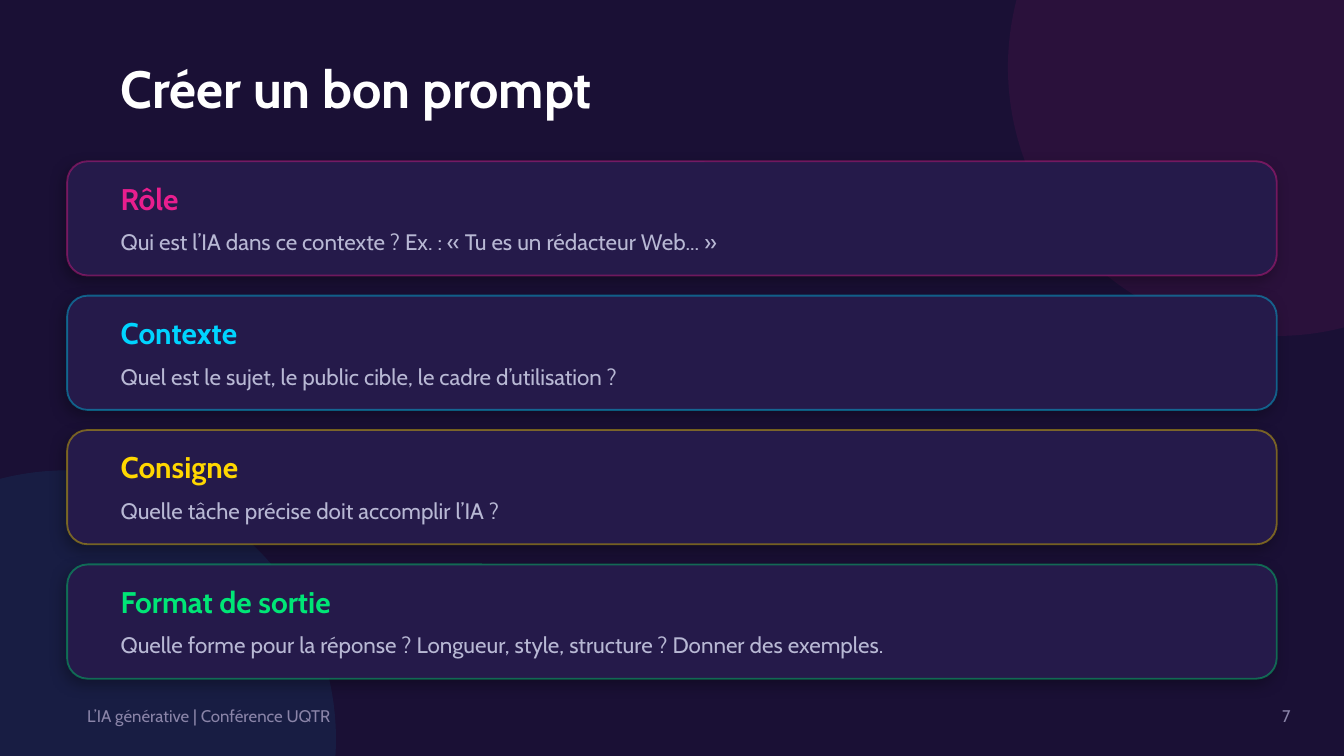
from lxml import etree
from pptx import Presentation
from pptx import util as u
from pptx.dml.color import RGBColor
from pptx.enum import shapes, text
from pptx.oxml import ns

FONT = "Cabin"
NIGHT = RGBColor(0x1A, 0x10, 0x35)
PANEL = RGBColor(0x25, 0x1A, 0x4A)
WHITE = RGBColor(0xFF, 0xFF, 0xFF)
LAVENDER = RGBColor(0xB8, 0xB8, 0xD4)
MUTED = RGBColor(0x8A, 0x84, 0xA8)
BLACK = RGBColor(0x00, 0x00, 0x00)
PINK = RGBColor(0xE9, 0x1E, 0x8E)
CYAN = RGBColor(0x00, 0xD4, 0xFF)
GOLD = RGBColor(0xFF, 0xD7, 0x00)
GREEN = RGBColor(0x00, 0xE6, 0x76)

deck = Presentation()
deck.slide_width = u.Inches(10)
deck.slide_height = deck.slide_width * 9 // 16
UNIT = deck.slide_width // 100  # square grid, 100 columns across the slide
page = deck.slides.add_slide(deck.slide_layouts[6])
page.background.fill.solid()
page.background.fill.fore_color.rgb = NIGHT


def add_panel(kind, grid, color, opacity=None):
    panel = page.shapes.add_shape(kind, *(int(n * UNIT) for n in grid))
    panel.shadow.inherit = False
    panel.fill.solid()
    panel.fill.fore_color.rgb = color
    panel.line.fill.background()
    if opacity:
        tint = panel.fill._xPr.find(".//" + ns.qn("a:srgbClr"))
        etree.SubElement(tint, ns.qn("a:alpha"), val=str(opacity * 1000))
    return panel


def add_label(words, grid, size, color, bold=False, align=text.PP_ALIGN.LEFT):
    box = page.shapes.add_textbox(*(int(n * UNIT) for n in grid))
    frame = box.text_frame
    frame.word_wrap = True
    frame.vertical_anchor = text.MSO_ANCHOR.MIDDLE
    para = frame.paragraphs[0]
    para.text = words
    para.alignment = align
    para.font.name = FONT
    para.font.size = u.Pt(size)
    para.font.bold = bold
    para.font.color.rgb = color


# Background discs
add_panel(shapes.MSO_SHAPE.OVAL, (75, -15, 40, 40), PINK, 8)
add_panel(shapes.MSO_SHAPE.OVAL, (-15, 35, 40, 40), CYAN, 7)

# Title
add_label("Créer un bon prompt", (8, 3, 80, 7), 28, WHITE, bold=True)

# Cards, one every ten rows
cards = [
    ("Rôle", "Qui est l’IA dans ce contexte ? Ex. : « Tu es un rédacteur Web... »", PINK),
    ("Contexte", "Quel est le sujet, le public cible, le cadre d’utilisation ?", CYAN),
    ("Consigne", "Quelle tâche précise doit accomplir l’IA ?", GOLD),
    ("Format de sortie",
     "Quelle forme pour la réponse ? Longueur, style, structure ? Donner des exemples.", GREEN),
]
for index, (heading, detail, accent) in enumerate(cards):
    top = 12 + 10 * index
    card = add_panel(shapes.MSO_SHAPE.ROUNDED_RECTANGLE, (5, top, 90, 8.5), PANEL)
    card.adjustments[0] = 0.18

    # Translucent outline
    card.line.width = u.Pt(1)
    card.line.color.rgb = accent
    tint = card.line._ln.find(".//" + ns.qn("a:srgbClr"))
    etree.SubElement(tint, ns.qn("a:alpha"), val="40000")

    # Soft shadow towards the lower left
    effects = card._element.spPr.find(ns.qn("a:effectLst"))
    shadow = etree.SubElement(
        effects, ns.qn("a:outerShdw"), blurRad=str(u.Pt(8)), dist=str(u.Pt(3)),
        dir=str(135 * 60000), algn="bl", rotWithShape="0")
    tint = etree.SubElement(shadow, ns.qn("a:srgbClr"), val=str(BLACK))
    etree.SubElement(tint, ns.qn("a:alpha"), val="30000")

    add_label(heading, (8, top + 1, 20, 3.5), 16, accent, bold=True)
    add_label(detail, (8, top + 4.5, 84, 3), 12, LAVENDER)

# Footer and page number
add_label("L’IA générative | Conférence UQTR", (5.5, 51.5, 90, 3.5), 9, MUTED)
add_label("7", (92, 51.5, 5, 3.5), 9, MUTED, align=text.PP_ALIGN.RIGHT)

deck.save("out.pptx")
